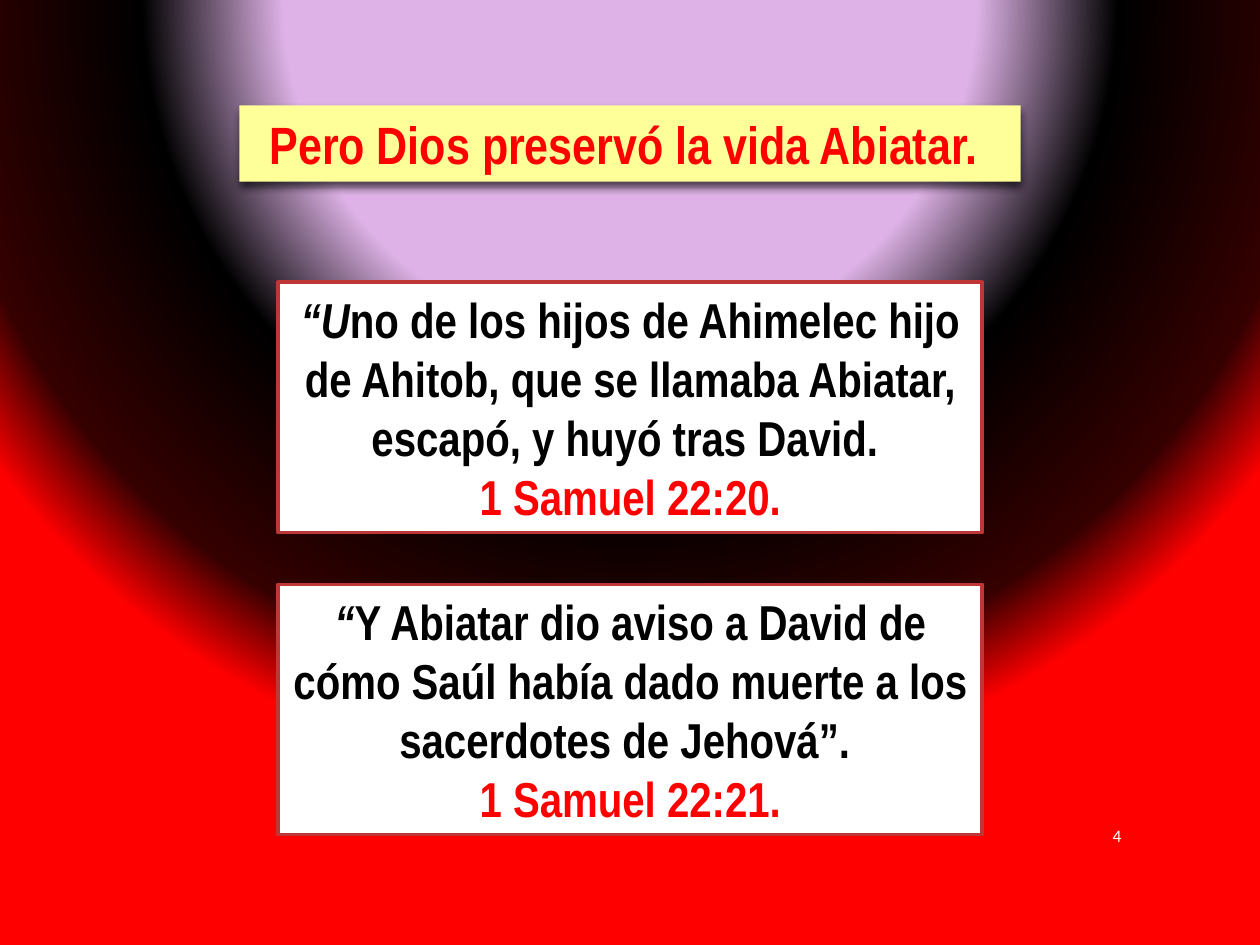
import lxml.etree
import pptx
import pptx.dml.color
import pptx.enum.shapes
import pptx.enum.text
import pptx.oxml
import pptx.oxml.ns
import pptx.util

Pt = pptx.util.Pt
qn = pptx.oxml.ns.qn
ALIGN = pptx.enum.text.PP_ALIGN
RED = "FF0000"
BLACK = "000000"


def color(value):
    return pptx.dml.color.RGBColor.from_string(value)


def drawing_xml(markup):
    namespace = pptx.oxml.ns.nsdecls("a")
    return pptx.oxml.parse_xml(markup.replace(">", f" {namespace}>", 1))


def add_text(paragraph, text, size=28, font="Arial Narrow", fill=BLACK,
             bold=True, italic=False, outline=0.25, align=ALIGN.CENTER):
    paragraph.alignment = align
    run = paragraph.add_run()
    run.text = text
    run.font.size = Pt(size)
    run.font.name = font
    run.font.bold = bold
    run.font.italic = italic
    run.font.color.rgb = color(fill)
    if outline:
        run.font._element.insert(0, drawing_xml(
            f'<a:ln w="{int(Pt(outline))}"><a:solidFill>'
            f'<a:srgbClr val="{fill}"/></a:solidFill></a:ln>'))


def paint_background(slide, stops):
    slide.background.fill.gradient()
    gradient = slide.element.find(".//" + qn("a:gradFill"))
    for child in list(gradient):
        gradient.remove(child)
    stop_list = lxml.etree.SubElement(gradient, qn("a:gsLst"))
    for position, value in stops:
        stop = lxml.etree.SubElement(stop_list, qn("a:gs"), pos=str(position * 1000))
        lxml.etree.SubElement(stop, qn("a:srgbClr"), val=value)
    circle = lxml.etree.SubElement(gradient, qn("a:path"), path="circle")
    lxml.etree.SubElement(circle, qn("a:fillToRect"),
                          l="50000", t="-80000", r="50000", b="180000")


def add_panel(slide, box, fill):
    panel = slide.shapes.add_shape(
        pptx.enum.shapes.MSO_SHAPE.RECTANGLE, *map(Pt, box))
    panel.shadow.inherit = False
    panel.fill.solid()
    panel.fill.fore_color.rgb = color(fill)
    panel.line.fill.background()
    panel.text_frame.word_wrap = True
    panel.text_frame.auto_size = pptx.enum.text.MSO_AUTO_SIZE.SHAPE_TO_FIT_TEXT
    return panel


def add_heading(slide, box, text):
    heading = add_panel(slide, box, "FFFF99")
    effects = heading.element.spPr.find(qn("a:effectLst"))
    effects.append(drawing_xml(
        f'<a:outerShdw blurRad="{int(Pt(5))}" dist="{int(Pt(3))}" dir="5400000" '
        'rotWithShape="0"><a:srgbClr val="000000"><a:alpha val="65000"/>'
        '</a:srgbClr></a:outerShdw>'))
    add_text(heading.text_frame.paragraphs[0], text, size=30, fill=RED)


def add_verse(slide, box, opening, text, reference):
    verse = add_panel(slide, box, "FFFFFF")
    verse.line.color.rgb = color("BD3737")
    verse.line.width = Pt(2)
    quotation = verse.text_frame.paragraphs[0]
    add_text(quotation, opening, italic=True)
    add_text(quotation, text)
    add_text(verse.text_frame.add_paragraph(), reference, fill=RED, outline=1.5)


def add_page_number(slide, box, number):
    frame = slide.shapes.add_textbox(*map(Pt, box)).text_frame
    frame.word_wrap = True
    frame.vertical_anchor = pptx.enum.text.MSO_ANCHOR.MIDDLE
    add_text(frame.paragraphs[0], number, size=10, font="Calibri", fill="FFFFFF",
             bold=False, outline=0, align=ALIGN.RIGHT)


def main():
    presentation = pptx.Presentation()
    presentation.slide_width = Pt(720)
    presentation.slide_height = Pt(540)
    slide = presentation.slides.add_slide(presentation.slide_layouts[6])
    paint_background(slide, [(44, "DEB2E6"), (62, BLACK), (88, "350000"), (100, RED)])
    add_page_number(slide, (614.9, 462.5, 33, 29.5), "4")
    add_heading(slide, (136.8, 60.3, 446.4, 43.6), "Pero Dios preservó la vida Abiatar. ")
    verses = [
        ("“U", "no de los hijos de Ahimelec hijo de Ahitob, que se llamaba Abiatar, "
         "escapó, y huyó tras David. ", "1 Samuel 22:20."),
        ("“", "Y Abiatar dio aviso a David de cómo Saúl había dado muerte a los "
         "sacerdotes de Jehová”. ", "1 Samuel 22:21."),
    ]
    for index, verse in enumerate(verses):
        add_verse(slide, (158.9, 161.3 + index * 172.6, 402.4, 143.1), *verse)
    presentation.save("out.pptx")


if __name__ == "__main__":
    main()
